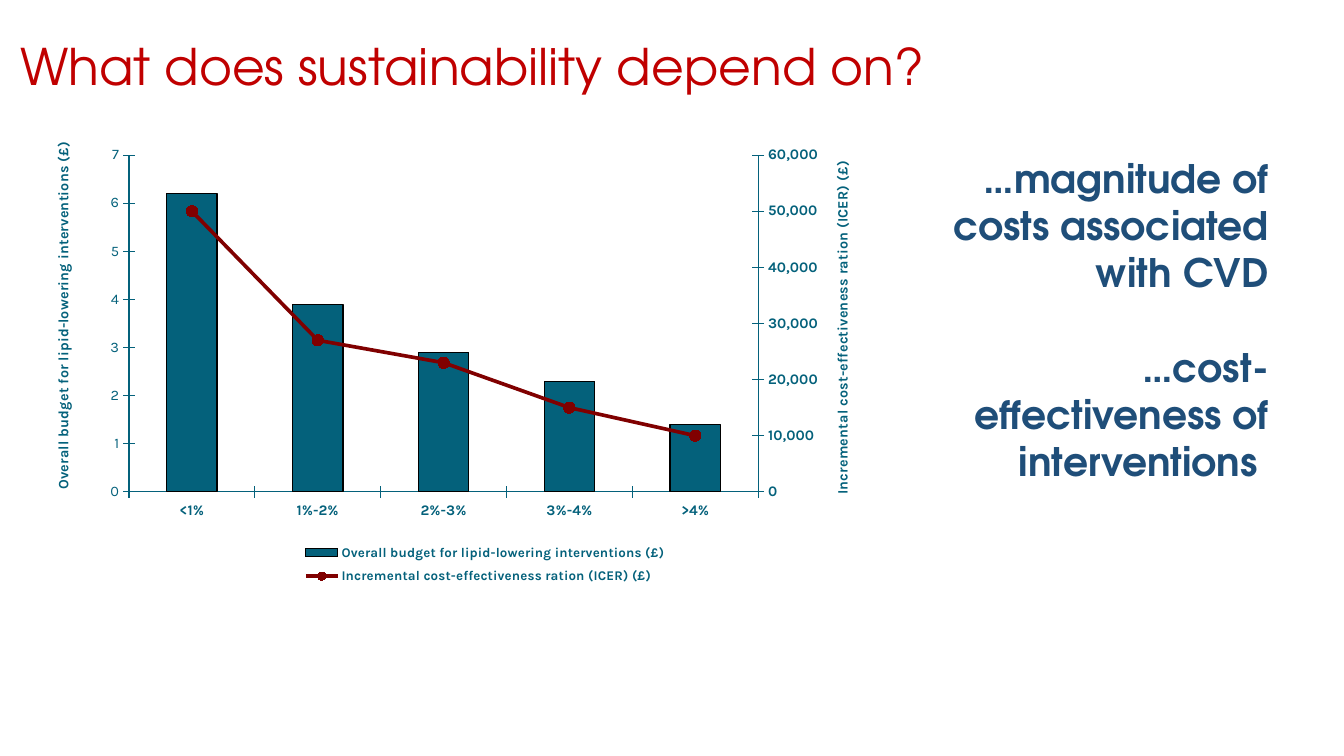
from copy import deepcopy
from dataclasses import dataclass
from lxml.etree import SubElement as Sub
from pptx import Presentation
from pptx.chart.axis import ValueAxis
from pptx.chart.data import CategoryChartData as Data
from pptx.dml.color import RGBColor as RGB
from pptx.enum.chart import XL_CHART_TYPE as Kind, XL_LEGEND_POSITION as Side
from pptx.enum.chart import XL_MARKER_STYLE as Mark, XL_TICK_MARK as Tick
from pptx.enum.text import MSO_AUTO_SIZE as Fit, PP_ALIGN as Align
from pptx.oxml import parse_xml
from pptx.oxml.ns import nsdecls, qn
from pptx.util import Pt

PX = 9144


@dataclass(frozen=True)
class Theme:
    red: str = "C00000"
    navy: str = "1F4E79"
    teal: str = "04617B"
    wine: str = "800000"
    black: str = "000000"
    head: str = "TeX Gyre Adventor"
    body: str = "Karla"
    title: float = 36
    claim: float = 28
    gap: float = 34
    tick: float = 10.4
    name: float = 10.2
    key: float = 9.5
    thin: float = 0.87
    thick: float = 2.6


T = Theme()
BUDGET = "Overall budget for lipid-lowering interventions (£)"
RATIO = "Incremental cost-effectiveness ration (ICER) (£)"
RATES = ["<1%", "1%-2%", "2%-3%", "3%-4%", ">4%"]
COSTS = [6.2, 3.9, 2.9, 2.3, 1.4]
ICERS = [50000, 27000, 23000, 15000, 10000]
CLAIMS = ["…magnitude of costs associated with CVD",
          "…cost-effectiveness of interventions "]


def apply(item, **vals):
    for key, val in vals.items():
        setattr(item, key, val)


def style(font, name, size, color, bold=False):
    apply(font, name=name, size=Pt(size), bold=bold)
    font.color.rgb = RGB.from_string(color)


def stroke(line, color, width):
    line.color.rgb = RGB.from_string(color)
    line.width = Pt(width)


def paint(fill, color):
    fill.solid()
    fill.fore_color.rgb = RGB.from_string(color)


def scale(box):
    return [v * PX for v in box]


def write(slide, box, lines, size, color, bold=False, align=Align.LEFT):
    frame = slide.shapes.add_textbox(*scale(box)).text_frame
    apply(frame, word_wrap=True, auto_size=Fit.SHAPE_TO_FIT_TEXT)
    for i, line in enumerate(lines):
        para = frame.add_paragraph() if i else frame.paragraphs[0]
        para.alignment = align
        if i:
            para.space_before = Pt(T.gap)
        run = para.add_run()
        run.text = line
        style(run.font, T.head, size, color, bold)


def place(node, index, box, part, inner=False):
    for old in node.findall(qn("c:layout")):
        node.remove(old)
    layout = parse_xml(f"<c:layout {nsdecls('c')}/>")
    man = Sub(layout, qn("c:manualLayout"))
    if inner:
        Sub(man, qn("c:layoutTarget"), val="inner")
    for key in "xy":
        Sub(man, qn(f"c:{key}Mode"), val="edge")
    for key, val, full in zip("xywh", part, box[2:] * 2):
        Sub(man, qn(f"c:{key}"), val=str(val / full))
    node.insert(index, layout)


def dress(axis, bold):
    apply(axis, has_major_gridlines=False, major_tick_mark=Tick.CROSS,
          minor_tick_mark=Tick.NONE)
    stroke(axis.format.line, T.teal, T.thin)
    style(axis.tick_labels.font, T.body, T.tick, T.teal, bold)


def measure(axis, text, top, step, form, bold, box, spot):
    dress(axis, bold)
    apply(axis, minimum_scale=0, maximum_scale=top, major_unit=step)
    apply(axis.tick_labels, number_format=form, number_format_is_linked=False)
    title = axis.axis_title
    frame = title.text_frame
    frame.text = text
    style(frame.paragraphs[0].runs[0].font, T.body, T.name, T.teal, True)
    body = next(title._element.iter(qn("a:bodyPr")))
    body.attrib.update({"rot": "-5400000", "vert": "horz"})
    place(title._element, 1, box, spot)


def split(area):
    bars = area.find(qn("c:barChart"))
    ser = bars.findall(qn("c:ser"))[1]
    flag = ser.find(qn("c:invertIfNegative"))
    if flag is not None:
        ser.remove(flag)
    line = parse_xml(
        f'<c:lineChart {nsdecls("c")}><c:grouping val="standard"/>'
        '<c:varyColors val="0"/><c:marker val="1"/>'
        '<c:axId val="501"/><c:axId val="502"/></c:lineChart>')
    line.insert(2, ser)
    bars.addnext(line)
    cat, val = area.find(qn("c:catAx")), area.find(qn("c:valAx"))
    hidden, right = deepcopy(cat), deepcopy(val)
    val.addnext(right)
    right.addnext(hidden)
    edits = [(hidden, {"axId": "501", "crossAx": "502", "delete": "1"}),
             (right, {"axId": "502", "crossAx": "501", "axPos": "r",
                      "crosses": "max"})]
    for axis, vals in edits:
        for key, new in vals.items():
            axis.find(qn(f"c:{key}")).set("val", new)
    return ValueAxis(right)


def graph(slide, box):
    data = Data()
    data.categories = RATES
    data.add_series(BUDGET, COSTS)
    data.add_series(RATIO, ICERS)
    chart = slide.shapes.add_chart(
        Kind.COLUMN_CLUSTERED, *scale(box), data).chart
    apply(chart, has_title=False, has_legend=True)
    style(chart.font, T.body, T.tick, T.black)
    area = chart._chartSpace.chart.plotArea
    left = chart.value_axis
    right = split(area)
    place(area, 0, box, (91, 28, 624, 334), True)
    dress(chart.category_axis, True)
    measure(left, BUDGET, 7, 1, "General", False, box, (13, 12))
    measure(right, RATIO, 60000, 10000, "#,##0", True, box, (786, 31))

    bars, line = chart.plots
    apply(bars, gap_width=150, vary_by_categories=False)
    cost, icer = bars.series[0], line.series[0]
    paint(cost.format.fill, T.teal)
    stroke(cost.format.line, T.black, T.thin)
    stroke(icer.format.line, T.wine, T.thick)
    icer.smooth = False
    apply(icer.marker, style=Mark.CIRCLE, size=8)
    paint(icer.marker.format.fill, T.wine)
    stroke(icer.marker.format.line, T.wine, T.thin)

    legend = chart.legend
    apply(legend, position=Side.BOTTOM, include_in_layout=False)
    style(legend.font, T.body, T.key, T.teal, True)
    place(legend._element, 1, box, (262, 407, 365, 54))


def main():
    deck = Presentation()
    apply(deck, slide_width=1333 * PX, slide_height=750 * PX)
    slide = deck.slides.add_slide(deck.slide_layouts[6])
    write(slide, (10, 30, 1311, 71), ["What does sustainability depend on?"],
          T.title, T.red)
    write(slide, (927, 148, 341, 340), CLAIMS, T.claim, T.navy, True,
          Align.RIGHT)
    graph(slide, (37, 126, 848, 463))
    deck.save("out.pptx")


if __name__ == "__main__":
    main()
